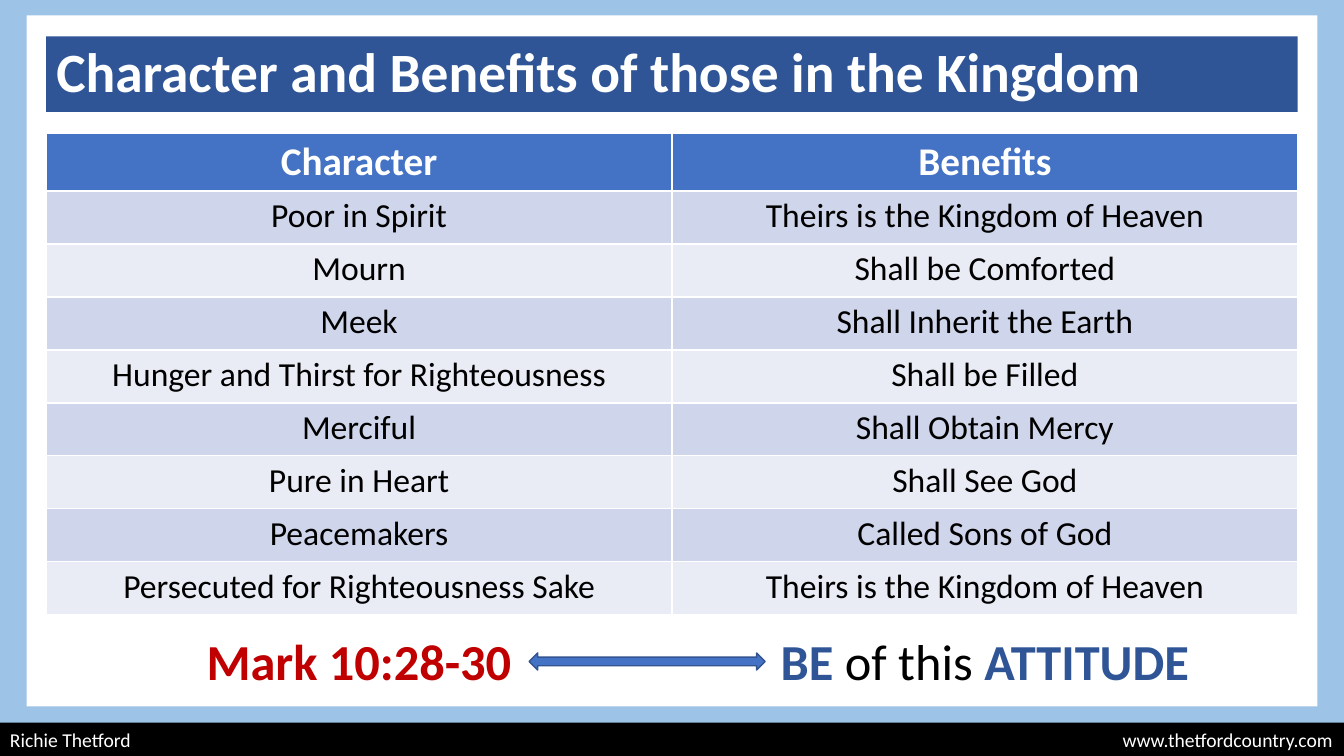
import collections

import lxml.etree
import pptx
import pptx.dml.color
import pptx.enum.shapes
import pptx.enum.text
import pptx.oxml.ns
import pptx.util

Pt = pptx.util.Pt
Shape = pptx.enum.shapes.MSO_SHAPE
Align = pptx.enum.text.PP_ALIGN
Anchor = pptx.enum.text.MSO_ANCHOR
Box = collections.namedtuple("Box", "left top width height")

FONT = "Calibri"
COLORS = {
    "white": "FFFFFF",
    "black": "000000",
    "navy": "2F5597",
    "sky": "9DC3E6",
    "blue": "4472C4",
    "outline": "325491",
    "red": "C00000",
    "band": "CFD5EA",
    "pale": "E9EBF5",
}
PAGE = Box(0, 0, 960, 540)
TITLE = Box(33, 26, 894, 54)
TABLE = Box(33, 95, 894, 344.2)
CLOSING = Box(33, 446.4, 894, 51)
FOOTER = Box(0, 516.2, 960, 24.2)

HEADINGS = ("Character", "Benefits")
BEATITUDES = [
    ("Poor in Spirit", "Theirs is the Kingdom of Heaven"),
    ("Mourn", "Shall be Comforted"),
    ("Meek", "Shall Inherit the Earth"),
    ("Hunger and Thirst for Righteousness", "Shall be Filled"),
    ("Merciful", "Shall Obtain Mercy"),
    ("Pure in Heart", "Shall See God"),
    ("Peacemakers", "Called Sons of God"),
    ("Persecuted for Righteousness Sake", "Theirs is the Kingdom of Heaven"),
]


def rgb(name):
    """Return the named colour."""
    return pptx.dml.color.RGBColor.from_string(COLORS[name])


def paint(target, color):
    """Give a shape or cell a solid fill."""
    target.fill.solid()
    target.fill.fore_color.rgb = rgb(color)


def style(span, size, color, bold=False):
    """Format one run."""
    span.font.name = FONT
    span.font.size = Pt(size)
    span.font.bold = bold
    span.font.color.rgb = rgb(color)


def add_block(page, box, color, kind=Shape.RECTANGLE):
    """Add a filled shape without outline or shadow."""
    block = page.shapes.add_shape(kind, *map(Pt, box))
    block.shadow.inherit = False
    paint(block, color)
    block.line.fill.background()
    return block


def add_frame(page, box):
    """Draw the four border bars inside the box."""
    side, bar, bottom = 19, 12, 504.6
    add_block(page, Box(box.left, box.top, side, box.height), "sky")
    add_block(page, Box(box.left + box.width - side, box.top, side, box.height), "sky")
    add_block(page, Box(box.left, box.top + bottom, box.width, bar), "sky")
    add_block(page, Box(box.left, box.top - 1, box.width, bar), "sky")


def add_title(page, box, text):
    """Place the title placeholder as a filled banner."""
    title = page.shapes.title
    title.left, title.top, title.width, title.height = map(Pt, box)
    paint(title, "navy")
    frame = title.text_frame
    frame.text = text
    frame.word_wrap = True
    frame.auto_size = pptx.enum.text.MSO_AUTO_SIZE.NONE
    frame.vertical_anchor = Anchor.MIDDLE
    para = frame.paragraphs[0]
    para.alignment = Align.LEFT
    para.line_spacing = 0.9
    style(para.runs[0], 39.6, "white", True)


def add_beatitudes(page, box):
    """Fill the two-column table of characters and benefits."""
    rows = [HEADINGS] + BEATITUDES
    table = page.shapes.add_table(len(rows), len(HEADINGS), *map(Pt, box)).table
    header = 41.4
    for index, words in enumerate(rows):
        height = (box.height - header) / len(BEATITUDES) if index else header
        table.rows[index].height = Pt(height)
        for cell, text in zip(table.rows[index].cells, words):
            cell.text = text
            para = cell.text_frame.paragraphs[0]
            para.alignment = Align.CENTER
            if index:
                paint(cell, "band" if index % 2 else "pale")
                style(para.runs[0], 24, "black")
            else:
                paint(cell, "blue")
                style(para.runs[0], 28, "white", True)


def add_statement(page, box, parts):
    """Add a centred line made of coloured parts."""
    frame = page.shapes.add_textbox(*map(Pt, box)).text_frame
    frame.word_wrap = True
    para = frame.paragraphs[0]
    para.alignment = Align.CENTER
    for text, color, bold in parts:
        span = para.add_run()
        span.text = text
        style(span, 36, color, bold)


def add_closing(page, box):
    """Add the two closing statements and the arrow between them."""
    half = box.width / 2
    add_statement(page, box._replace(width=half), [("Mark 10:28-30", "red", True)])
    add_statement(
        page,
        box._replace(left=box.left + half, width=half),
        [("BE ", "navy", True), ("of this ", "black", False), ("ATTITUDE", "navy", True)],
    )
    arrow = add_block(
        page, Box(box.left + 345, box.top + 20, 168.6, 12.2), "blue", Shape.LEFT_RIGHT_ARROW
    )
    arrow.line.color.rgb = rgb("outline")
    arrow.line.width = Pt(1)


def add_footer(page, box, author, site):
    """Draw the footer bar with the author left and the site at a right tab."""
    bar = add_block(page, box, "black")
    frame = bar.text_frame
    frame.text = f"{author}\t{site}"
    frame.vertical_anchor = Anchor.MIDDLE
    para = frame.paragraphs[0]
    para.alignment = Align.LEFT
    for span in para.runs:
        style(span, 14, "white")
    qn = pptx.oxml.ns.qn
    tabs = lxml.etree.SubElement(para._p.get_or_add_pPr(), qn("a:tabLst"))
    lxml.etree.SubElement(tabs, qn("a:tab"), pos=str(Pt(box.width - 15)), algn="r")


def main():
    """Build and save the deck."""
    deck = pptx.Presentation()
    deck.slide_width, deck.slide_height = Pt(PAGE.width), Pt(PAGE.height)
    page = deck.slides.add_slide(deck.slide_layouts[5])
    add_title(page, TITLE, "Character and Benefits of those in the Kingdom")
    add_frame(page, PAGE)
    add_footer(page, FOOTER, "Richie Thetford", "www.thetfordcountry.com")
    add_beatitudes(page, TABLE)
    add_closing(page, CLOSING)
    deck.save("out.pptx")


if __name__ == "__main__":
    main()
